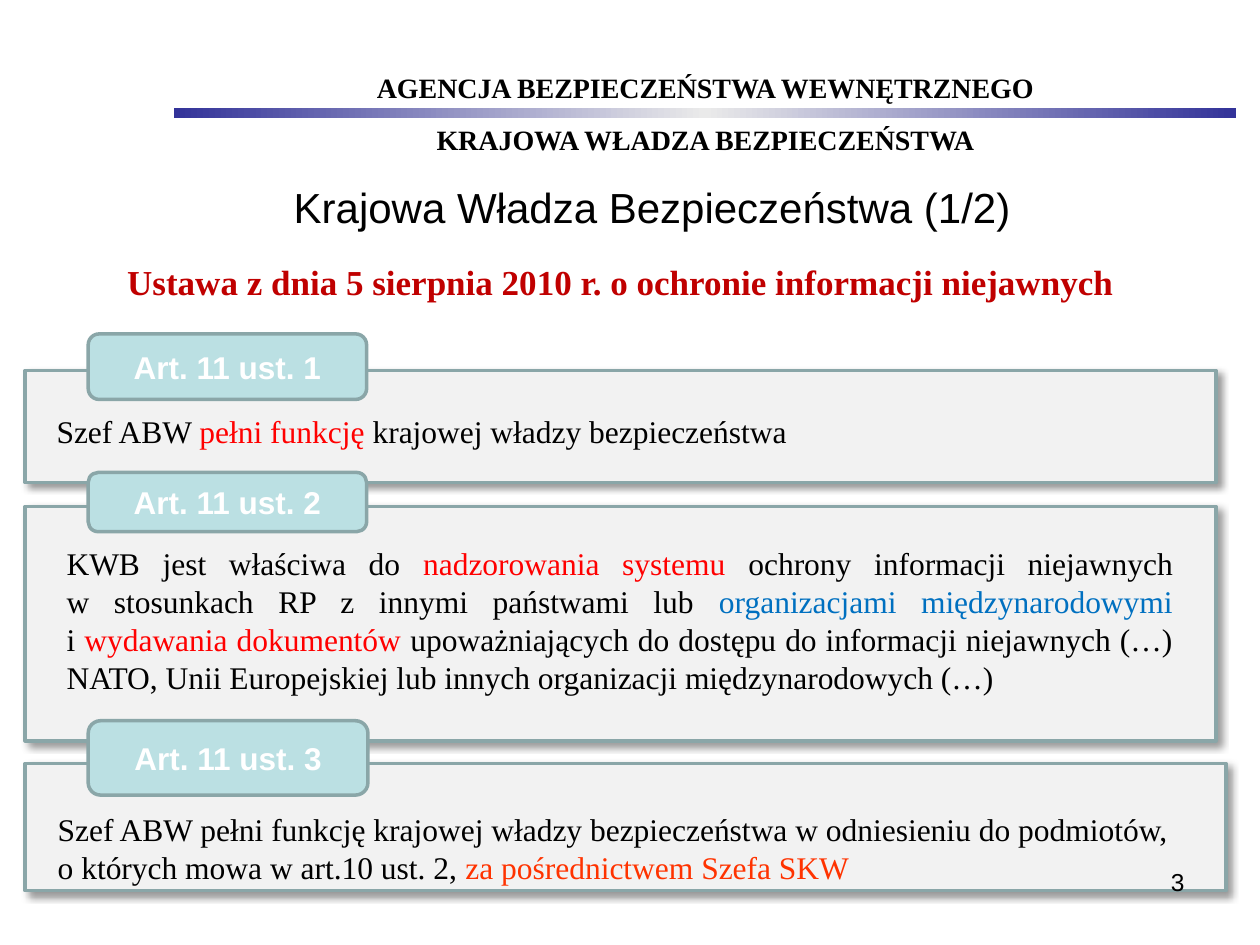
from copy import deepcopy

from lxml.etree import SubElement
from pptx import Presentation
from pptx.dml.color import RGBColor
from pptx.enum.shapes import MSO_SHAPE as SHAPE
from pptx.enum.text import MSO_ANCHOR as ANCHOR, PP_ALIGN as ALIGN
from pptx.oxml.ns import qn
from pptx.util import Inches, Pt

# Grid of 100 columns by 75 rows; every box is (column, row, columns, rows)
CELL = Inches(0.1)
COLUMNS, ROWS = 100, 75
SERIF, SANS = "Times New Roman", "Arial"
BLACK, WHITE, RED, BLUE, ORANGE = "000000", "FFFFFF", "FF0000", "0070C0", "FF3300"
DARK_RED, PANEL, TAB, BORDER = "C00000", "F2F2F2", "BBE0E3", "8AA6A8"


def color(hex_string):
    return RGBColor.from_string(hex_string)


def cells(box):
    return [round(value * CELL) for value in box]


def inside(box, part):
    """Turn a box measured from another box's corner into slide cells."""
    return box[0] + part[0], box[1] + part[1], part[2], part[3]


def write(shape, runs, size, font, align=ALIGN.LEFT, bold=False):
    """Fill one paragraph with (text, colour) runs; a newline breaks the line."""
    frame = shape.text_frame
    frame.word_wrap = True
    paragraph = frame.paragraphs[0]
    paragraph.alignment = align
    paragraph.font.size, paragraph.font.name = Pt(size), font
    paragraph.font.bold = bold
    for text, hex_string in runs:
        for index, line in enumerate(text.split("\n")):
            if index:
                paragraph.add_line_break()
            if line:
                run = paragraph.add_run()
                run.text = line
                run.font.color.rgb = color(hex_string)


def add_text(shapes, box, runs, size, font, align=ALIGN.CENTER, bold=False):
    write(shapes.add_textbox(*cells(box)), runs, size, font, align, bold)


def add_block(shapes, kind, box, fill):
    shape = shapes.add_shape(kind, *cells(box))
    shape.shadow.inherit = False
    shape.fill.solid()
    shape.fill.fore_color.rgb = color(fill)
    shape.line.color.rgb = color(BORDER)
    shape.line.width = Pt(2)
    return shape


def cast_shadow(shape):
    effects = shape.element.spPr.find(qn("a:effectLst"))
    shadow = SubElement(effects, qn("a:outerShdw"), blurRad=str(Pt(4)), dist=str(Pt(3)),
                        dir=str(45 * 60000), algn="tl", rotWithShape="0")
    tint = SubElement(shadow, qn("a:srgbClr"), val=BLACK)
    SubElement(tint, qn("a:alpha"), val="40000")


def add_header(slide, box):
    left, top, width, height = box
    # Gradient rule
    rule = slide.shapes.add_shape(SHAPE.RECTANGLE, *cells((left, top + 3.5, width, 0.8)))
    rule.shadow.inherit = False
    rule.line.fill.background()
    rule.fill.gradient()
    rule.fill.gradient_angle = 0
    stop_list = rule.element.spPr.find(".//" + qn("a:gsLst"))
    stop_list.append(deepcopy(stop_list[0]))
    for stop, position, hex_string in zip(rule.fill.gradient_stops, (0, 0.5, 1),
                                          ("333399", "EAEAEA", "333399")):
        stop.position = position
        stop.color.rgb = color(hex_string)
    # Lines above and below the rule
    for offset, text in ((0, "AGENCJA BEZPIECZEŃSTWA WEWNĘTRZNEGO"),
                         (4.1, "KRAJOWA WŁADZA BEZPIECZEŃSTWA")):
        add_text(slide.shapes, (left + 7.15, top + offset, 70.1, 3.7),
                 [(text, BLACK)], 16, SERIF, bold=True)


def add_titles(slide, box):
    add_text(slide.shapes, inside(box, (0, 6.3, 94.5, 5.5)),
             [("Ustawa z dnia 5 sierpnia 2010 r. o ochronie informacji niejawnych", DARK_RED)],
             20, SERIF, bold=True)
    add_text(slide.shapes, inside(box, (3.9, 0, 91.7, 12.5)),
             [("Krajowa Władza Bezpieczeństwa (1/2)", BLACK)], 24, SANS)


def add_article(slide, box, label, tab, body, runs, align=ALIGN.LEFT):
    """Shadowed panel with body text and a label tab over its top edge."""
    shapes = slide.shapes.add_group_shape().shapes
    cast_shadow(add_block(shapes, SHAPE.RECTANGLE, box, PANEL))
    add_text(shapes, inside(box, body), runs, 18, SERIF, align)
    tab_shape = add_block(shapes, SHAPE.ROUNDED_RECTANGLE, inside(box, tab), TAB)
    tab_shape.text_frame.vertical_anchor = ANCHOR.MIDDLE
    write(tab_shape, [(label, WHITE)], 18, SANS, ALIGN.CENTER, bold=True)


def main():
    presentation = Presentation()
    presentation.slide_width, presentation.slide_height = COLUMNS * CELL, ROWS * CELL
    slide = presentation.slides.add_slide(presentation.slide_layouts[6])

    add_header(slide, (13.8, 5.1, 84.3, 7.8))
    add_titles(slide, (2, 13.9, 95.6, 12.5))

    # Articles of the act
    add_article(slide, (2, 29.4, 94.5, 8.9), "Art. 11 ust. 1",
                (5, -2.9, 22.1, 5.2), (1.5, 2.8, 92.9, 4),
                [("Szef ABW ", BLACK), ("pełni funkcję ", RED),
                 ("krajowej władzy bezpieczeństwa", BLACK)])
    add_article(slide, (2, 40.2, 94.5, 18.6), "Art. 11 ust. 2",
                (5, -2.7, 22.1, 4.7), (2.3, 2.5, 89.8, 13),
                [("KWB jest właściwa do ", BLACK), ("nadzorowania systemu ", RED),
                 ("ochrony informacji niejawnych\nw stosunkach RP z innymi państwami lub ", BLACK),
                 ("organizacjami międzynarodowymi\n", BLUE), ("i ", BLACK),
                 ("wydawania dokumentów ", RED),
                 ("upoważniających do dostępu do informacji niejawnych (…) NATO, "
                  "Unii Europejskiej lub innych organizacji międzynarodowych (…)", BLACK)],
                ALIGN.JUSTIFY)
    add_article(slide, (2, 60.6, 95.3, 10.1), "Art. 11 ust. 3",
                (5, -3.4, 22.2, 5.9), (1.6, 3.2, 93.7, 10),
                [("Szef ABW pełni funkcję krajowej władzy bezpieczeństwa w odniesieniu "
                  "do podmiotów,\no których mowa w art.10 ust. 2, ", BLACK),
                 ("za pośrednictwem Szefa SKW", ORANGE)])

    # Slide number
    add_text(slide.shapes, (71.7, 68.3, 23.3, 5.2), [("3", BLACK)], 14, SANS, ALIGN.RIGHT)

    presentation.save("out.pptx")


if __name__ == "__main__":
    main()
